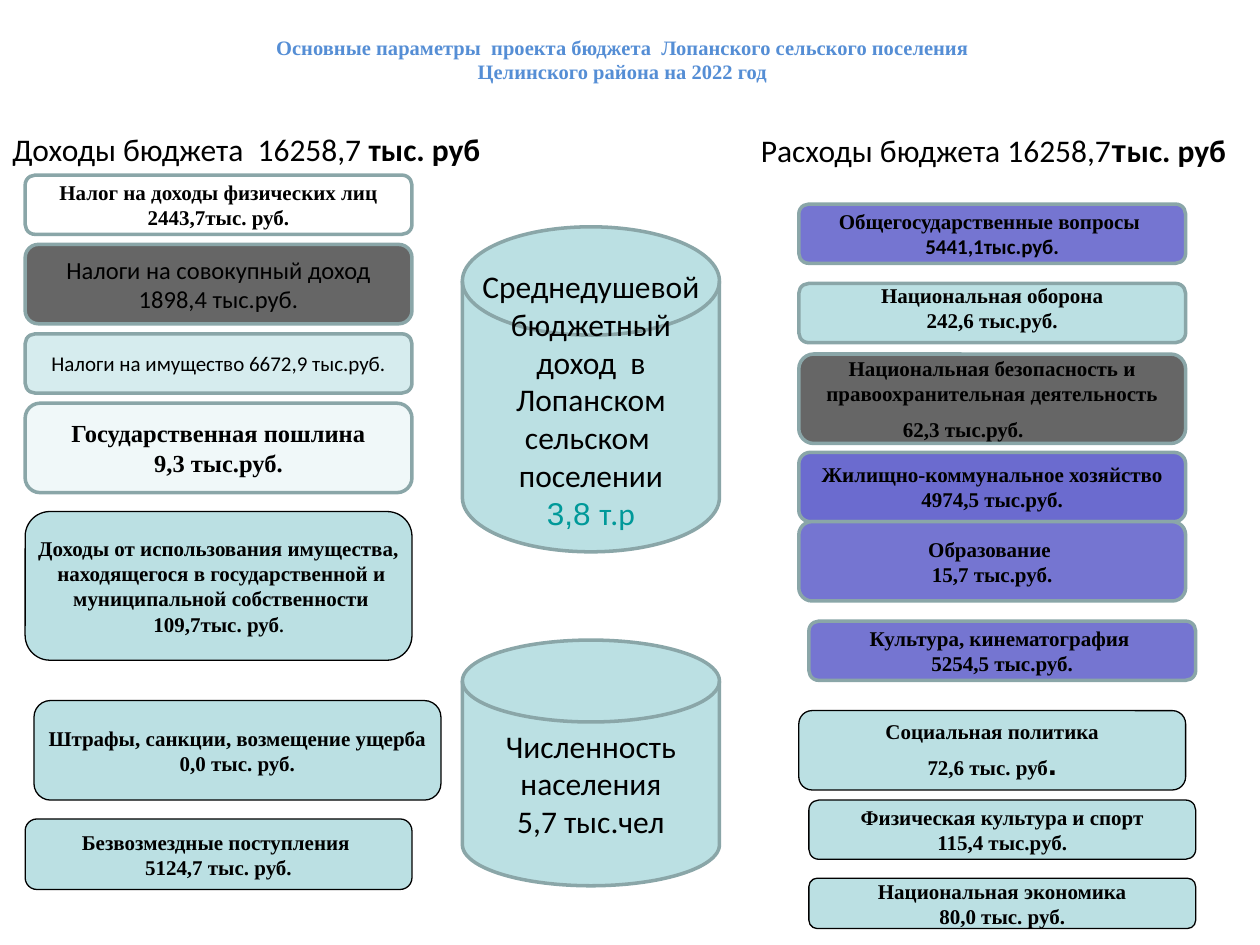
from pptx import Presentation
from pptx.dml.color import RGBColor
from pptx.enum import shapes, text
from pptx.util import Inches, Pt

BLACK = RGBColor(0x00, 0x00, 0x00)
WHITE = RGBColor(0xFF, 0xFF, 0xFF)
TITLE_BLUE = RGBColor(0x55, 0x8E, 0xD5)
TEAL = RGBColor(0x00, 0x99, 0x99)
AQUA = RGBColor(0xBB, 0xE0, 0xE3)
LIGHT_AQUA = RGBColor(0xD6, 0xEC, 0xEE)
PALE_AQUA = RGBColor(0xF0, 0xF8, 0xF9)
GREY = RGBColor(0x66, 0x66, 0x66)
VIOLET = RGBColor(0x75, 0x75, 0xD1)
DEEP_VIOLET = RGBColor(0x6B, 0x6B, 0xCF)
FRAME = RGBColor(0x8A, 0xA6, 0xA8)

SERIF, SANS, ARIAL = "Times New Roman", "Calibri", "Arial"
INCOME_LEFT, EXPENSE_LEFT, SHIFTED_LEFT = 0.2, 6.34, 6.42
BOX_WIDTH = 3.07
PLAIN = {"font": SANS, "bold": False}
BIG_PLAIN = {**PLAIN, "size": 18}


def write_text(shape, paragraphs, size=12, font=SERIF, color=BLACK, bold=True,
               align=text.PP_ALIGN.CENTER, anchor=text.MSO_ANCHOR.MIDDLE,
               wrap=True, bottom=0.05):
    """Fill a shape; a paragraph is a string or a list of (string, overrides)."""
    frame = shape.text_frame
    frame.word_wrap = wrap
    frame.vertical_anchor = anchor
    frame.margin_bottom = Inches(bottom)
    for index, content in enumerate(paragraphs):
        paragraph = frame.add_paragraph() if index else frame.paragraphs[0]
        paragraph.alignment = align
        runs = [(content, {})] if isinstance(content, str) else content
        for words, changes in runs:
            look = {"size": size, "font": font, "color": color, "bold": bold, **changes}
            run = paragraph.add_run()
            run.text = words
            run.font.size = Pt(look["size"])
            run.font.name = look["font"]
            run.font.bold = look["bold"]
            run.font.color.rgb = look["color"]
    return frame


def add_label(slide, left, top, width, height, paragraphs, **text_format):
    box = slide.shapes.add_textbox(*map(Inches, (left, top, width, height)))
    write_text(box, paragraphs, **text_format)


def add_block(slide, kind, left, top, width, height, paragraphs,
              fill=AQUA, line=FRAME, line_width=2, **text_format):
    shape = slide.shapes.add_shape(kind, *map(Inches, (left, top, width, height)))
    shape.shadow.inherit = False
    shape.fill.solid()
    shape.fill.fore_color.rgb = fill
    shape.line.color.rgb = line
    shape.line.width = Pt(line_width)
    return write_text(shape, paragraphs, **text_format)


def add_framed(slide, left, top, height, paragraphs, fill, **text_format):
    return add_block(slide, shapes.MSO_SHAPE.ROUNDED_RECTANGLE, left, top, BOX_WIDTH,
                     height, paragraphs, fill=fill, **text_format)


def add_outlined(slide, left, top, height, paragraphs, width=BOX_WIDTH):
    add_block(slide, shapes.MSO_SHAPE.ROUNDED_RECTANGLE, left, top, width, height,
              paragraphs, line=BLACK, line_width=0.75, wrap=False)


def add_cylinder(slide, top, height, paragraphs, **text_format):
    add_block(slide, shapes.MSO_SHAPE.FLOWCHART_MAGNETIC_DISK, 3.67, top, 2.04, height,
              paragraphs, **BIG_PLAIN, **text_format)


def add_headings(slide):
    add_label(slide, 0.51, 0.27, 8.86, 0.4,
              ["Основные параметры  проекта бюджета  Лопанского сельского поселения",
               "Целинского района на 2022 год"], size=11.7, color=TITLE_BLUE)
    heading = {**BIG_PLAIN, "align": text.PP_ALIGN.LEFT, "anchor": text.MSO_ANCHOR.TOP}
    add_label(slide, 0, 0.98, 4.92, 0.4,
              [[("Доходы бюджета  16258,7 ", {}), ("тыс. руб", {"bold": True})]], **heading)
    add_label(slide, 5.94, 0.99, 4.06, 0.4,
              [[("Расходы бюджета 16258,7", {}), ("т", {"font": ARIAL, "bold": True}),
                ("ыс. руб", {"bold": True})]], **heading)


def add_income(slide):
    left = INCOME_LEFT
    add_framed(slide, left, 1.39, 0.47,
               ["Налог на доходы физических лиц 2443,7тыс. руб."], WHITE)
    add_framed(slide, left, 1.94, 0.63,
               ["Налоги на совокупный доход", "1898,4 тыс.руб."], GREY, size=14, **PLAIN)
    add_framed(slide, left, 2.65, 0.47,
               ["Налоги на имущество 6672,9 тыс.руб."], LIGHT_AQUA, **PLAIN)
    add_framed(slide, left, 3.2, 0.71,
               ["Государственная пошлина", "9,3 тыс.руб."], PALE_AQUA, size=14)
    add_outlined(slide, left, 4.06, 1.18,
                 ["Доходы от использования имущества,",
                  [(" ", {"font": ARIAL}), ("находящегося в государственной и", {})],
                  " муниципальной собственности",
                  [("109,7тыс. руб", {}), (".", {"size": 10})]])
    add_outlined(slide, 0.27, 5.56, 0.79,
                 ["Штрафы, санкции, возмещение ущерба", "0,0 тыс. руб."], width=3.23)
    add_outlined(slide, left, 6.5, 0.56,
                 ["Безвозмездные поступления ", "5124,7 тыс. руб."])


def add_expenses(slide):
    left = EXPENSE_LEFT
    add_framed(slide, left, 1.62, 0.47,
               ["Общегосударственные вопросы ", [("5441,1тыс.руб.", {"font": SANS})]], VIOLET)
    add_framed(slide, left, 2.25, 0.47,
               ["Национальная оборона", "242,6 тыс.руб."], AQUA, bottom=0.13)
    security = add_framed(slide, left, 2.81, 0.71,
                          ["Национальная безопасность и правоохранительная деятельность",
                           "62,3 тыс.руб."], GREY)
    amount = security.paragraphs[1]
    amount.space_before = Pt(6)
    amount._p.get_or_add_pPr().set("marR", str(Inches(0.46)))
    add_framed(slide, left, 3.59, 0.55,
               ["Жилищно-коммунальное хозяйство 4974,5 тыс.руб."], DEEP_VIOLET)
    add_framed(slide, left, 4.14, 0.63, ["Образование ", "15,7 тыс.руб."], VIOLET)
    add_framed(slide, SHIFTED_LEFT, 4.93, 0.47,
               ["Культура, кинематография ", "5254,5 тыс.руб."], VIOLET)
    add_outlined(slide, left, 5.64, 0.63,
                 ["Социальная политика",
                  [("72,6 тыс. руб", {}), (".", {"size": 18, "font": ARIAL})]])
    add_outlined(slide, SHIFTED_LEFT, 6.35, 0.47,
                 ["Физическая культура и спорт", "115,4 тыс.руб."])
    add_outlined(slide, SHIFTED_LEFT, 6.97, 0.4,
                 ["Национальная экономика", "80,0 тыс. руб."])


def add_per_capita(slide):
    add_cylinder(slide, 1.8, 2.58,
                 ["Среднедушевой бюджетный доход  в Лопанском", "сельском ", "поселении",
                  [("3,8 ", {"font": ARIAL, "color": TEAL}), ("т.р", {"color": TEAL})]],
                 bottom=0.32)
    add_cylinder(slide, 5.08, 1.95, ["Численность населения", "5,7 тыс.чел"])


def main():
    presentation = Presentation()
    presentation.slide_width, presentation.slide_height = Inches(10), Inches(7.5)
    slide = presentation.slides.add_slide(presentation.slide_layouts[6])
    add_headings(slide)
    add_income(slide)
    add_per_capita(slide)
    add_expenses(slide)
    presentation.save("out.pptx")


if __name__ == "__main__":
    main()
